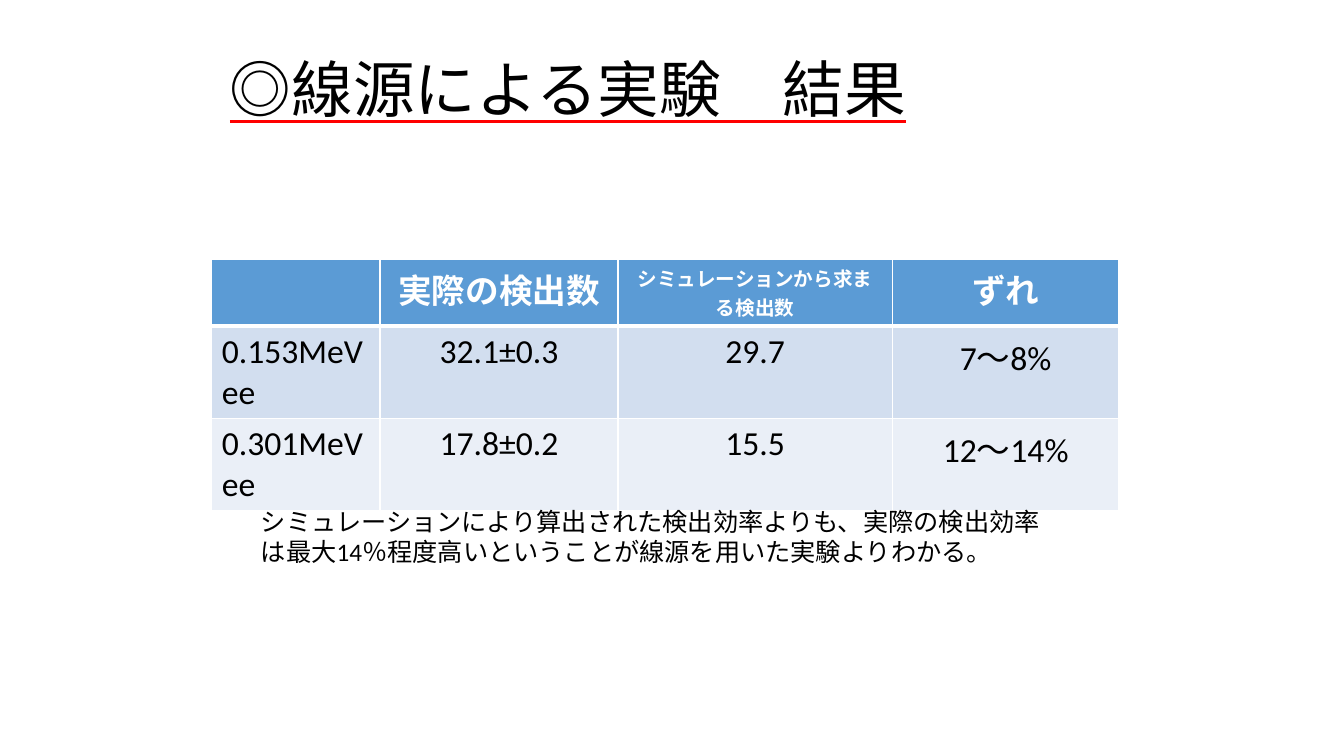
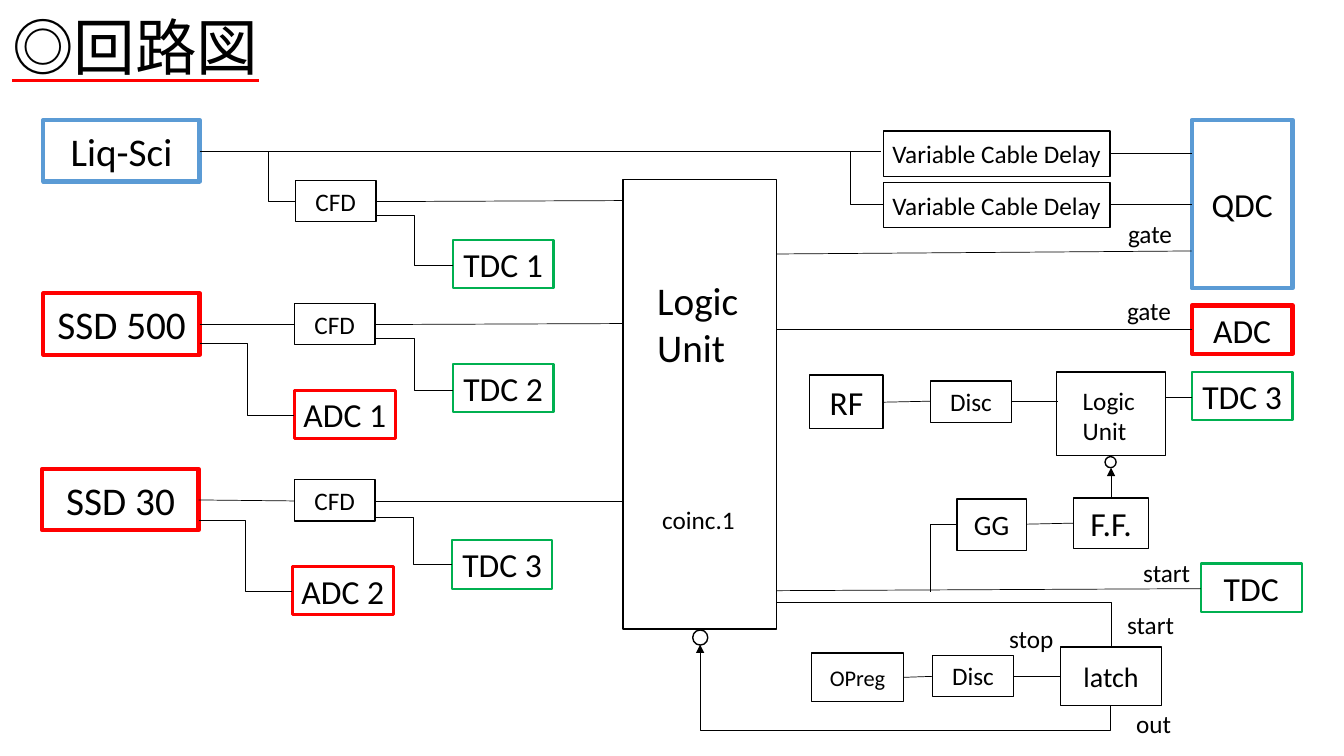
"""Build two slides: source experiment results and the readout circuit diagram."""
from lxml import etree
from pptx import Presentation
from pptx.dml.color import RGBColor
from pptx.enum.shapes import MSO_CONNECTOR, MSO_SHAPE
from pptx.enum.text import MSO_ANCHOR, MSO_AUTO_SIZE, PP_ALIGN
from pptx.oxml import parse_xml
from pptx.oxml.ns import nsdecls, qn
from pptx.util import Inches, Pt

LEFT, CENTER = PP_ALIGN.LEFT, PP_ALIGN.CENTER
MIDDLE = MSO_ANCHOR.MIDDLE
STRAIGHT, ELBOW = MSO_CONNECTOR.STRAIGHT, MSO_CONNECTOR.ELBOW
RECTANGLE, CIRCLE = MSO_SHAPE.RECTANGLE, MSO_SHAPE.FLOWCHART_CONNECTOR
FONT = "Calibri"
COLORS = {
    "black": "000000", "white": "FFFFFF", "red": "FF0000", "green": "00B050",
    "blue": "5B9BD5", "band": "D2DEEF", "pale": "EAEFF7",
}


def write(frame, text, size, align=LEFT, color="black", bold=False):
    """Fill a text frame, one paragraph for each line."""
    for index, line in enumerate(text.split("\n")):
        para = frame.add_paragraph() if index else frame.paragraphs[0]
        para.alignment = align
        span = para.add_run()
        span.text = line
        span.font.name = FONT
        span.font.size = Pt(size)
        span.font.bold = bold
        span.font.color.rgb = RGBColor.from_string(COLORS[color])


def draw_wire(page, kind, x1, y1, x2, y2, arrow=False):
    """Draw a thin black wire and return its connector."""
    wire = page.shapes.add_connector(kind, Inches(x1), Inches(y1), Inches(x2), Inches(y2))
    wire.line.color.rgb = RGBColor.from_string(COLORS["black"])
    wire.line.width = Pt(0.5)
    if arrow:
        etree.SubElement(wire.line._get_or_add_ln(), qn("a:tailEnd"), type="triangle")
    etree.SubElement(wire._element.spPr, qn("a:effectLst"))
    return wire


deck = Presentation()
deck.slide_width, deck.slide_height = Inches(13.33), Inches(7.5)
title_only = deck.slide_layouts[5]

pages = []
for heading, left, top, width, height in [
    ("◎線源による実験\u3000結果".replace("\u3000", "　"), 2.18, 0.29, 9, 1.25),
    ("◎回路図", 0.02, 0.02, 11.5, 0.97),
]:
    page = deck.slides.add_slide(title_only)
    title = page.shapes.title
    title.left, title.top = Inches(left), Inches(top)
    title.width, title.height = Inches(width), Inches(height)
    frame = title.text_frame
    frame.auto_size = MSO_AUTO_SIZE.NONE
    frame.vertical_anchor = MIDDLE
    write(frame, heading, 44)
    para = frame.paragraphs[0]
    para.line_spacing = 0.9
    font = para.runs[0].font
    font.underline = True
    font._element.find(qn("a:latin")).addprevious(parse_xml(
        f'<a:uFill {nsdecls("a")}><a:solidFill><a:srgbClr val="{COLORS["red"]}"/>'
        "</a:solidFill></a:uFill>"))
    pages.append(page)
results, circuit = pages

rows = [
    ["", "実際の検出数", "シミュレーションから求まる検出数", "ずれ"],
    ["0.153MeVee", "32.1±0.3", "29.7", "7～8%"],
    ["0.301MeVee", "17.8±0.2", "15.5", "12～14%"],
]
table = results.shapes.add_table(
    3, 4, Inches(2.1), Inches(2.57), Inches(9), Inches(2.47)).table
table.horz_banding = False
for column, width in zip(table.columns, [1.67, 2.36, 2.72, 2.25]):
    column.width = Inches(width)
for row, height in zip(table.rows, [0.65, 0.91, 0.91]):
    row.height = Inches(height)
for r, values in enumerate(rows):
    for c, value in enumerate(values):
        cell = table.cell(r, c)
        properties = cell._tc.get_or_add_tcPr()
        for side in ["lnL", "lnR", "lnT", "lnB"]:
            thick = (r, side) in [(0, "lnB"), (1, "lnT")]
            properties.append(parse_xml(
                f'<a:{side} {nsdecls("a")} w="{Pt(3 if thick else 1)}"><a:solidFill>'
                f'<a:srgbClr val="{COLORS["white"]}"/></a:solidFill></a:{side}>'))
        cell.fill.solid()
        cell.fill.fore_color.rgb = RGBColor.from_string(COLORS[["blue", "band", "pale"][r]])
        if value:
            write(cell.text_frame, value, 14 if (r, c) == (0, 2) else 24,
                  CENTER if c else LEFT, "black" if r else "white", r == 0)

box = results.shapes.add_textbox(Inches(2.49), Inches(4.97), Inches(7.95), Inches(0.71))
box.text_frame.word_wrap = True
write(box.text_frame, "シミュレーションにより算出された検出効率よりも、実際の検出効率"
      "は最大14％程度高いということが線源を用いた実験よりわかる。", 18)

modules = [
    (0.8, 0.41, "black", 1, 18, [
        ("CFD", 2.93, 1.79), ("CFD", 2.92, 3.01), ("CFD", 2.92, 4.76),
        ("Disc", 9.23, 3.78), ("Disc", 9.25, 6.5)]),
    (2.25, 0.45, "black", 1, 18, [
        ("Variable Cable Delay", 8.76, 1.3), ("Variable Cable Delay", 8.76, 1.81)]),
    (1.55, 0.61, "blue", 3, 28, [("Liq-Sci", 0.43, 1.19)]),
    (1.55, 0.61, "red", 3, 28, [("SSD 500", 0.43, 2.91), ("SSD 30", 0.42, 4.65)]),
    (1, 0.48, "green", 1.5, 24, [
        ("TDC 1", 4.49, 2.38), ("TDC 2", 4.49, 3.61), ("TDC 3", 4.48, 5.36),
        ("TDC 3", 11.82, 3.69), ("TDC", 11.91, 5.59)]),
    (1, 0.48, "red", 2.25, 24, [("ADC 1", 2.92, 3.87), ("ADC 2", 2.9, 5.62)]),
    (1, 0.48, "red", 3, 24, [("ADC", 11.82, 3.03)]),
    (1, 1.67, "blue", 3, 24, [("QDC", 11.82, 1.19)]),
    (1.52, 4.46, "black", 1, 28, [("", 6.18, 1.78)]),
    (1.08, 0.83, "black", 1, 18, [("", 10.48, 3.69)]),
    (0.73, 0.53, "black", 1, 24, [("RF", 8.03, 3.72)]),
    (0.74, 0.5, "black", 1, 24, [("F.F.", 10.65, 4.94)]),
    (0.69, 0.51, "black", 1, 20, [("GG", 9.49, 4.95)]),
    (1, 0.58, "black", 1, 20, [("latch", 10.52, 6.42)]),
    (0.91, 0.48, "black", 1, 16, [("OPreg", 8.05, 6.48)]),
    (0.11, 0.11, "black", 1, 0, [("", 10.96, 4.53)]),
    (0.15, 0.15, "black", 1, 0, [("", 6.87, 6.25)]),
]
for width, height, color, weight, size, places in modules:
    for name, left, top in places:
        box = circuit.shapes.add_shape(
            RECTANGLE if size else CIRCLE,
            Inches(left), Inches(top), Inches(width), Inches(height))
        box.shadow.inherit = False
        box.fill.background()
        box.line.color.rgb = RGBColor.from_string(COLORS[color])
        box.line.width = Pt(weight)
        if name:
            frame = box.text_frame
            frame.word_wrap = False
            frame.vertical_anchor = MIDDLE
            frame.margin_left = frame.margin_right = 0
            frame.margin_top = frame.margin_bottom = 0
            write(frame, name, size, CENTER)

for text, left, top, width, height, size in [
    ("Logic\nUnit", 6.42, 2.69, 1.09, 1.34, 28),
    ("coinc.1", 6.47, 4.95, 1.1, 0.52, 18),
    ("Logic\nUnit", 10.64, 3.77, 0.8, 0.71, 18),
    ("start", 11.08, 6, 0.8, 0.4, 18),
    ("stop", 9.91, 6.13, 0.8, 0.4, 18),
    ("out", 11.17, 6.98, 0.8, 0.4, 18),
    ("start", 11.24, 5.48, 0.8, 0.4, 18),
    ("gate", 11.09, 2.12, 0.8, 0.4, 18),
    ("gate", 11.08, 2.88, 0.8, 0.4, 18),
]:
    label = circuit.shapes.add_textbox(
        Inches(left), Inches(top), Inches(width), Inches(height))
    label.text_frame.word_wrap = True
    write(label.text_frame, text, size)

for ends in [
    (1.98, 1.5, 8.74, 1.5), (3.73, 2, 6.18, 1.99), (1.98, 3.22, 2.92, 3.22),
    (3.72, 3.22, 6.18, 3.21), (1.97, 4.96, 2.92, 4.97), (3.72, 4.97, 6.18, 4.97),
    (11.02, 1.52, 11.82, 1.52), (11.02, 2.03, 11.82, 2.03), (7.7, 2.52, 11.82, 2.49),
    (7.7, 3.27, 11.82, 3.27), (8.77, 3.99, 9.23, 3.98), (10.03, 3.98, 10.49, 3.98),
    (11.56, 3.94, 11.82, 3.94), (10.18, 5.2, 10.65, 5.19), (7.7, 5.86, 11.91, 5.84),
    (8.96, 6.72, 9.25, 6.71), (10.05, 6.71, 10.52, 6.71),
]:
    draw_wire(circuit, STRAIGHT, *ends)
draw_wire(circuit, STRAIGHT, 11.02, 4.94, 11.02, 4.64, arrow=True)

for ends in [
    (2.39, 1.5, 2.93, 2), (3.73, 2.14, 4.49, 2.63), (1.98, 3.41, 2.92, 4.12),
    (1.97, 5.16, 2.9, 5.87), (3.73, 3.36, 4.49, 3.87), (3.72, 5.13, 4.48, 5.6),
    (8.1, 1.5, 8.76, 2.03),
]:
    draw_wire(circuit, ELBOW, *ends)

for ends in [(9.49, 5.2, 9.23, 5.87), (7.7, 5.98, 11.02, 6.42)]:
    corner = draw_wire(circuit, ELBOW, *ends)
    corner._element.spPr.find(qn("a:prstGeom")).set("prst", "bentConnector2")

feedback = draw_wire(circuit, ELBOW, 9.28, 4.66, 8.68, 8.73, arrow=True)
properties = feedback._element.spPr
properties.find(qn("a:xfrm")).set("rot", "5400000")
geometry = properties.find(qn("a:prstGeom"))
for adjustments in geometry.findall(qn("a:avLst")):
    geometry.remove(adjustments)
geometry.append(parse_xml(
    f'<a:avLst {nsdecls("a")}><a:gd name="adj1" fmla="val -41800"/></a:avLst>'))

deck.save("out.pptx")
